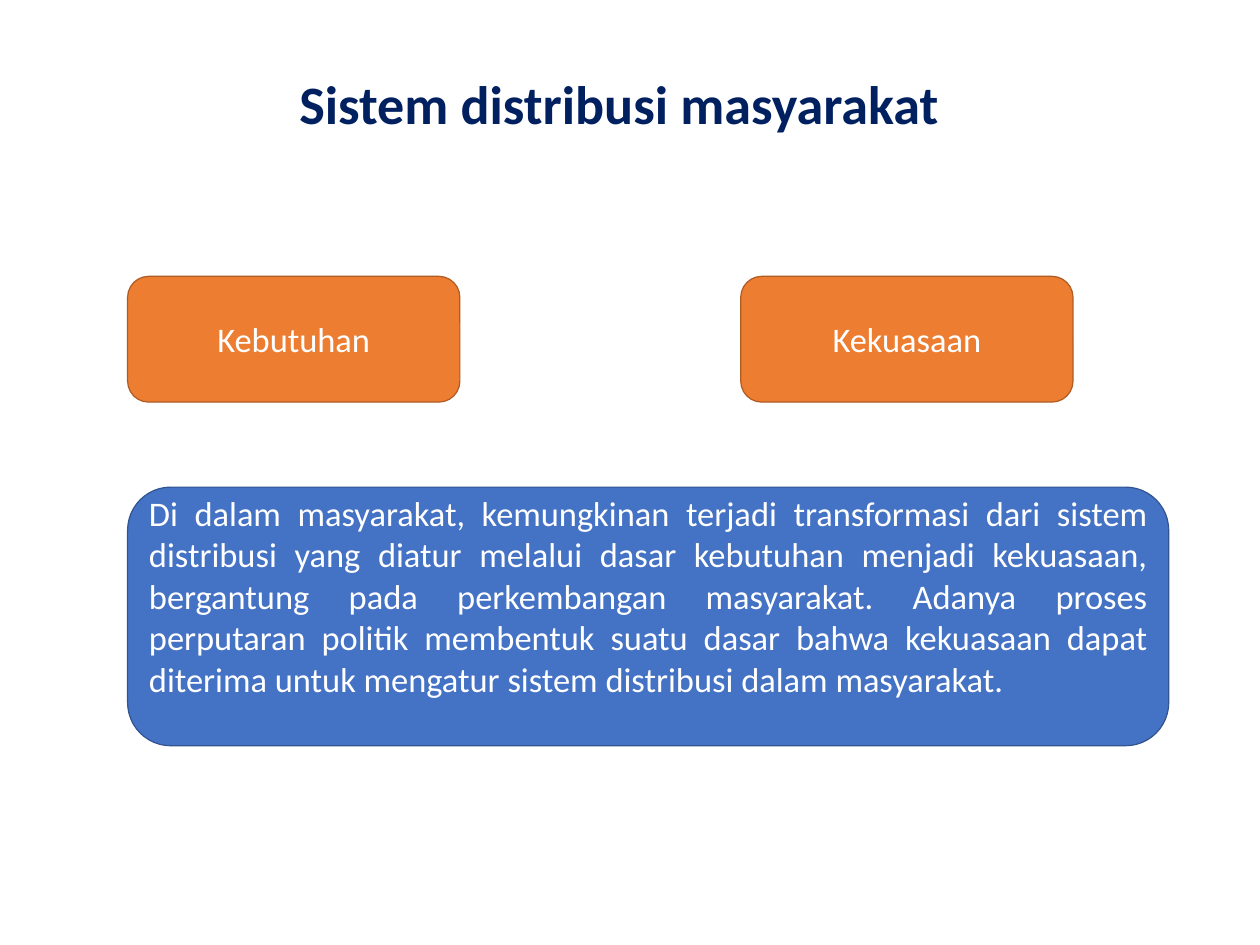
from pptx import Presentation
from pptx.dml.color import RGBColor
from pptx.enum.shapes import MSO_SHAPE
from pptx.enum.text import MSO_ANCHOR, PP_ALIGN
from pptx.util import Inches, Pt

FONT = "Calibri"
NAVY, WHITE = "002060", "FFFFFF"
ORANGE, DARK_ORANGE = "ED7D31", "AF5C24"
BLUE, DARK_BLUE = "4472C4", "325491"

LEFT = 1.44
BASIS_TOP, BASIS_WIDTH, BASIS_HEIGHT = 3.12, 3.75, 1.42
BASIS_STEP = 6.92
BASES = ["Kebutuhan", "Kekuasaan"]
EXPLANATION = (
    "Di dalam masyarakat, kemungkinan terjadi transformasi dari sistem "
    "distribusi yang diatur melalui dasar kebutuhan menjadi kekuasaan, "
    "bergantung pada perkembangan masyarakat. Adanya proses perputaran "
    "politik membentuk suatu dasar bahwa kekuasaan dapat diterima untuk "
    "mengatur sistem distribusi dalam masyarakat."
)


def color(hex_value):
    return RGBColor.from_string(hex_value)


def write_text(shape, text, size, hex_value, alignment, bold=False):
    frame = shape.text_frame
    frame.word_wrap = True
    frame.vertical_anchor = MSO_ANCHOR.MIDDLE
    paragraph = frame.paragraphs[0]
    paragraph.alignment = alignment
    run = paragraph.add_run()
    run.text = text
    run.font.name = FONT
    run.font.size = Pt(size)
    run.font.bold = bold
    run.font.color.rgb = color(hex_value)
    return paragraph


def add_title(slide, text):
    title = slide.shapes.add_textbox(
        Inches(3.28), Inches(0.58), Inches(10.94), Inches(1.25))
    paragraph = write_text(title, text, 44, NAVY, PP_ALIGN.LEFT, bold=True)
    paragraph.line_spacing = 0.9


def add_rounded_box(slide, left, top, width, height, fill, outline, text,
                    alignment=PP_ALIGN.CENTER):
    box = slide.shapes.add_shape(
        MSO_SHAPE.ROUNDED_RECTANGLE,
        Inches(left), Inches(top), Inches(width), Inches(height))
    box.shadow.inherit = False
    box.fill.solid()
    box.fill.fore_color.rgb = color(fill)
    box.line.color.rgb = color(outline)
    box.line.width = Pt(1)
    write_text(box, text, 28, WHITE, alignment)
    return box


def main():
    presentation = Presentation()
    presentation.slide_width = Inches(14.22)
    presentation.slide_height = Inches(10.67)
    slide = presentation.slides.add_slide(presentation.slide_layouts[6])

    add_title(slide, "Sistem distribusi masyarakat")
    for index, basis in enumerate(BASES):
        add_rounded_box(slide, LEFT + index * BASIS_STEP, BASIS_TOP,
                        BASIS_WIDTH, BASIS_HEIGHT, ORANGE, DARK_ORANGE, basis)
    explanation = add_rounded_box(slide, LEFT, 5.5, 11.75, 2.92, BLUE,
                                  DARK_BLUE, EXPLANATION, PP_ALIGN.JUSTIFY)
    # One line of free room below the text
    explanation.text_frame.margin_bottom = Inches(0.52)

    presentation.save("out.pptx")


if __name__ == "__main__":
    main()
